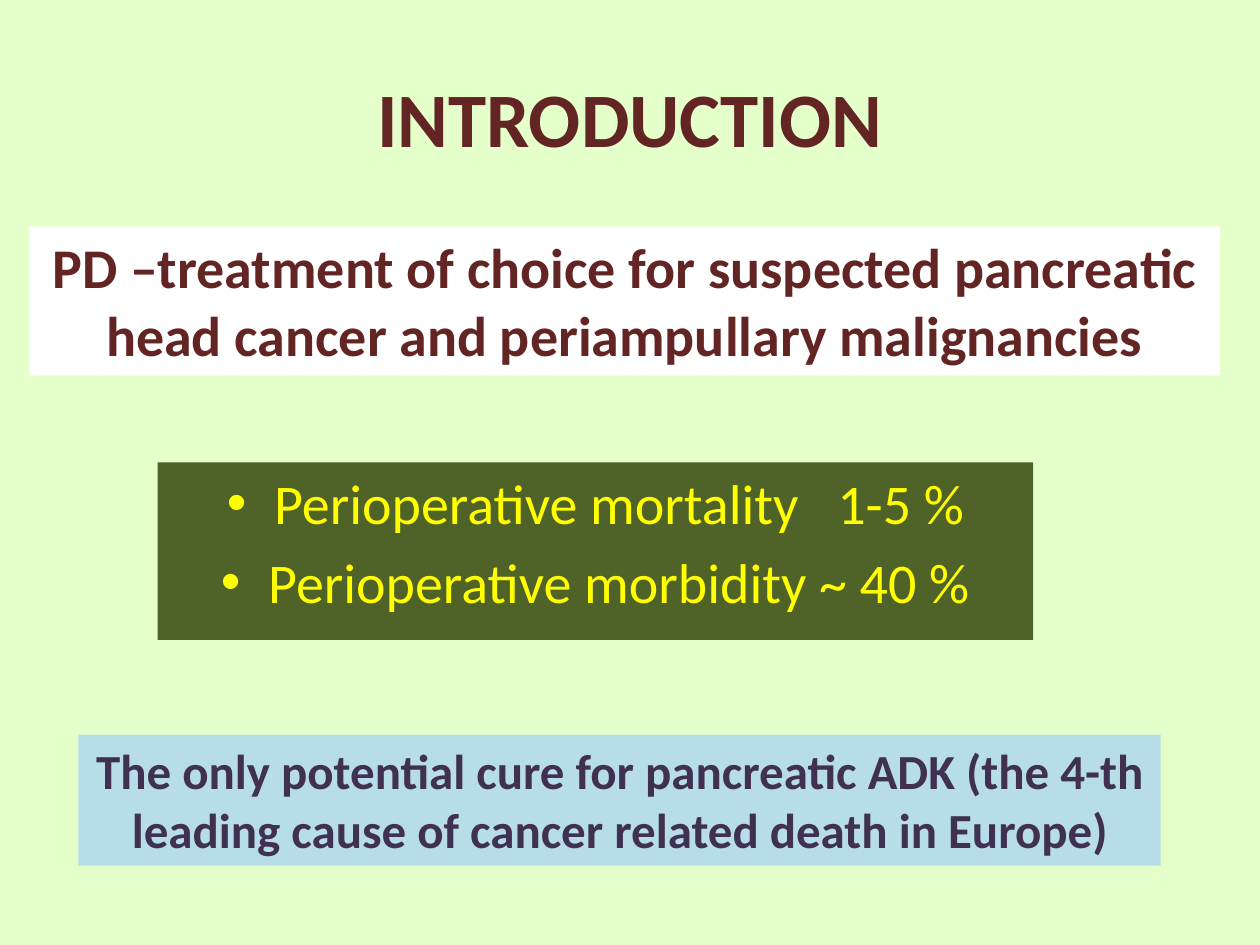
from pptx import Presentation
from pptx.dml.color import RGBColor
from pptx.enum.text import MSO_ANCHOR, MSO_AUTO_SIZE, PP_ALIGN
from pptx.util import Cm, Pt

PALE_GREEN = RGBColor(0xE5, 0xFF, 0xCB)
MAROON = RGBColor(0x63, 0x25, 0x23)
OLIVE = RGBColor(0x4F, 0x62, 0x28)
YELLOW = RGBColor(0xFF, 0xFF, 0x00)
LIGHT_BLUE = RGBColor(0xB7, 0xDE, 0xE8)
PURPLE = RGBColor(0x40, 0x31, 0x52)
WHITE = RGBColor(0xFF, 0xFF, 0xFF)

TITLE_FONT = {"name": "Calibri", "size": Pt(44), "bold": True}
CLAIM_FONT = {"name": "Calibri", "size": Pt(32), "bold": True}
RATE_FONT = {"name": "Calibri", "size": Pt(32), "bold": False}
CURE_FONT = {"name": "Calibri", "size": Pt(28), "bold": True}
WIDE_GAP = 1450  # extra width after a space, in hundredths of a point


def place(sp, left, top, width, height):
    box = {"left": left, "top": top, "width": width, "height": height}
    for name, value in box.items():
        setattr(sp, name, Cm(value))


def set_fill(sp, color):
    sp.fill.solid()
    sp.fill.fore_color.rgb = color


def add_run(p, text, font, color):
    r = p.add_run()
    r.text = text
    for name, value in font.items():
        setattr(r.font, name, value)
    r.font.color.rgb = color
    return r


def add_title(slide, text):
    sp = slide.shapes.title
    place(sp, 1.27, 0.76, 22.86, 3.18)
    sp.text_frame.vertical_anchor = MSO_ANCHOR.MIDDLE
    p = sp.text_frame.paragraphs[0]
    p.alignment = PP_ALIGN.CENTER
    add_run(p, text, TITLE_FONT, MAROON)


def add_rates(slide, rates):
    """Fill the body with one bullet per (label, value, space width) rate."""
    sp = slide.placeholders[1]
    place(sp, 3.18, 9.32, 17.65, 3.58)
    set_fill(sp, OLIVE)
    tf = sp.text_frame
    tf.auto_size = MSO_AUTO_SIZE.NONE
    for i, (label, value, gap) in enumerate(rates):
        p = tf.add_paragraph() if i else tf.paragraphs[0]
        p.alignment = PP_ALIGN.CENTER
        add_run(p, label, RATE_FONT, YELLOW)
        space = add_run(p, " ", RATE_FONT, YELLOW)
        space.font._element.set("spc", str(gap))
        add_run(p, value, RATE_FONT, YELLOW)


def add_banner(slide, text, box, fill, font, color):
    sp = slide.shapes.add_textbox(*map(Cm, box))
    set_fill(sp, fill)
    tf = sp.text_frame
    tf.word_wrap = True
    tf.auto_size = MSO_AUTO_SIZE.SHAPE_TO_FIT_TEXT
    p = tf.paragraphs[0]
    p.alignment = PP_ALIGN.CENTER
    add_run(p, text, font, color)


def main():
    prs = Presentation()
    prs.slide_width, prs.slide_height = Cm(25.4), Cm(19.05)
    slide = prs.slides.add_slide(prs.slide_layouts[1])
    set_fill(slide.background, PALE_GREEN)

    add_title(slide, "INTRODUCTION")
    add_rates(slide, [
        ("Perioperative mortality", "1-5 %", WIDE_GAP),
        ("Perioperative morbidity", "~ 40 %", 0),
    ])
    add_banner(slide, "The only potential cure for pancreatic ADK (the 4-th "
               "leading cause of cancer related death in Europe)",
               (1.58, 14.81, 21.82, 2.64), LIGHT_BLUE, CURE_FONT, PURPLE)
    add_banner(slide, "PD –treatment of choice for suspected pancreatic "
               "head cancer and periampullary malignancies",
               (0.6, 4.57, 24, 3), WHITE, CLAIM_FONT, MAROON)
    prs.save("out.pptx")


if __name__ == "__main__":
    main()
